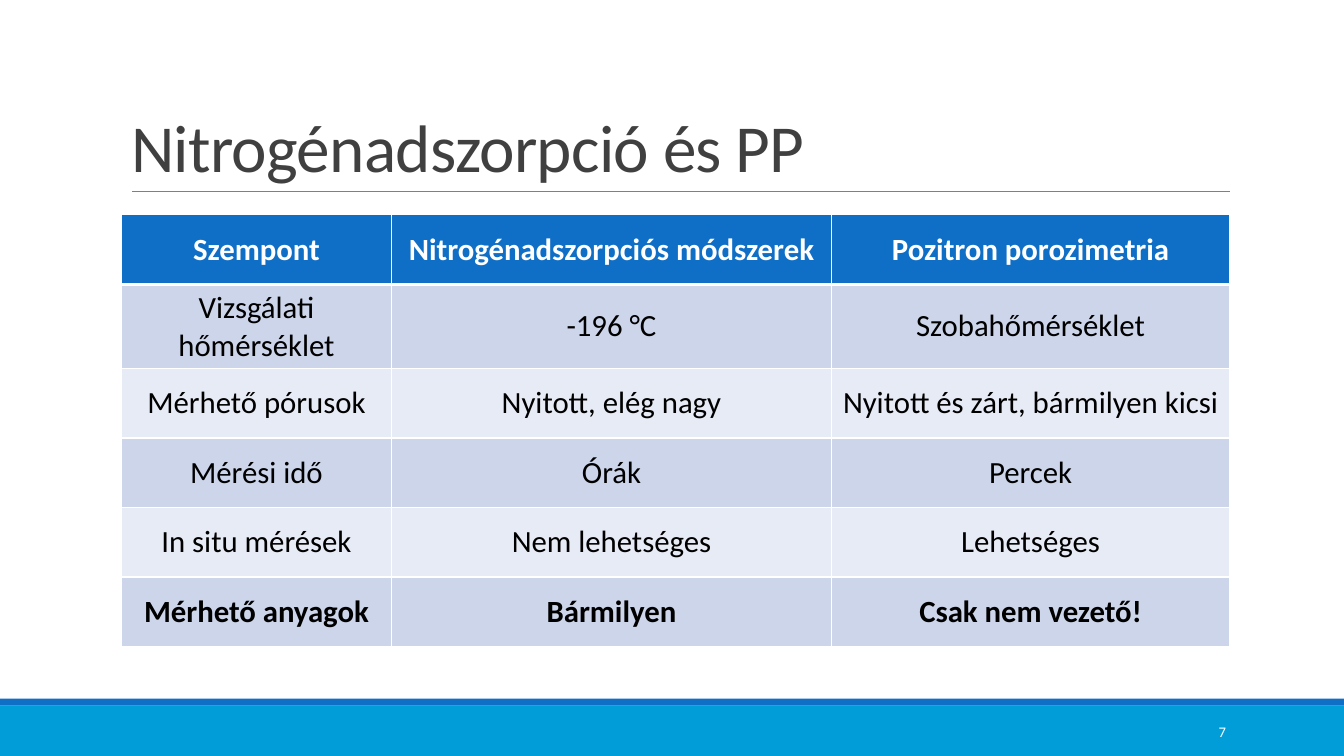
import pptx
import pptx.util
import pptx.dml.color
import pptx.enum.text
import pptx.enum.shapes
import pptx.oxml.ns
import lxml.etree
import dataclasses

Pt = pptx.util.Pt
Rgb = pptx.dml.color.RGBColor.from_string
Align = pptx.enum.text.PP_ALIGN
Anchor = pptx.enum.text.MSO_ANCHOR
qn = pptx.oxml.ns.qn


@dataclasses.dataclass(frozen=True)
class Theme:
    """Colours, type sizes and font of the slide."""
    font: str = "Calibri"
    white: str = "FFFFFF"
    black: str = "000000"
    ink: str = "404040"
    rule: str = "808080"
    blue: str = "0F6FC6"
    sky: str = "009DD9"
    bands: tuple = ("CCD5EA", "E7EBF5")
    title: float = 48
    cell: float = 22
    page: float = 10.5


THEME = Theme()
ROWS = [
    ("Szempont", "Nitrogénadszorpciós módszerek", "Pozitron porozimetria"),
    ("Vizsgálati hőmérséklet", "-196 °C", "Szobahőmérséklet"),
    ("Mérhető pórusok", "Nyitott, elég nagy", "Nyitott és zárt, bármilyen kicsi"),
    ("Mérési idő", "Órák", "Percek"),
    ("In situ mérések", "Nem lehetséges", "Lehetséges"),
    ("Mérhető anyagok", "Bármilyen", "Csak nem vezető!"),
]


def apply(item, form):
    """Set each attribute of item from a dict of format values."""
    for name, value in form.items():
        setattr(item, name, value)


def write(frame, text, size, color, bold=False, **form):
    """Write one formatted paragraph into a text frame and return its run."""
    para = frame.paragraphs[0]
    apply(para, form)
    run = para.add_run()
    run.text = text
    apply(run.font, {"name": THEME.font, "size": Pt(size), "bold": bold})
    run.font.color.rgb = Rgb(color)
    return run


def bar(slide, box, color):
    """Draw a plain filled band in the box."""
    shape = slide.shapes.add_shape(
        pptx.enum.shapes.MSO_SHAPE.RECTANGLE, *map(Pt, box))
    shape.shadow.inherit = False
    shape.fill.solid()
    shape.fill.fore_color.rgb = Rgb(color)
    shape.line.fill.background()


def footer(slide, box, page):
    """Draw the two footer bands and the page number."""
    left, top, width, height = box
    bar(slide, (left, top + 5, width, height - 5), THEME.sky)
    bar(slide, (left, top, width, 5), THEME.blue)
    spot = left + width - 180, top + 9.5, 102.75, 28.75
    frame = slide.shapes.add_textbox(*map(Pt, spot)).text_frame
    apply(frame, {"word_wrap": True, "vertical_anchor": Anchor.MIDDLE})
    write(frame, page, THEME.page, THEME.white, alignment=Align.RIGHT)


def head(slide, box, text):
    """Place the title in the box with a thin rule along its foot."""
    left, top, width, height = box
    foot = top + height
    line = slide.shapes.add_connector(
        pptx.enum.shapes.MSO_CONNECTOR.STRAIGHT,
        Pt(left + 7.9), Pt(foot), Pt(left + width), Pt(foot))
    line.line.color.rgb = Rgb(THEME.rule)
    line.line.width = Pt(0.5)
    lxml.etree.SubElement(line.element.spPr, qn("a:effectLst"))
    title = slide.shapes.title
    apply(title, dict(zip(("left", "top", "width", "height"), map(Pt, box))))
    frame = title.text_frame
    apply(frame, {"word_wrap": True, "vertical_anchor": Anchor.BOTTOM,
                  "auto_size": pptx.enum.text.MSO_AUTO_SIZE.NONE})
    run = write(frame, text, THEME.title, THEME.ink,
                alignment=Align.LEFT, line_spacing=0.85)
    run.font._element.set("spc", "-50")


def edge(cell, side, width):
    """Give one side of a cell a white border of the width in points."""
    props = cell._tc.get_or_add_tcPr()
    line = lxml.etree.SubElement(props, qn("a:ln" + side), w=str(Pt(width)))
    fill = lxml.etree.SubElement(line, qn("a:solidFill"))
    lxml.etree.SubElement(fill, qn("a:srgbClr"), val=THEME.white)


def grid(slide, box, rows, widths):
    """Place the comparison table in the box with banded rows."""
    shape = slide.shapes.add_table(len(rows), len(widths), *map(Pt, box))
    table = shape.table
    for col, width in zip(table.columns, widths):
        col.width = Pt(width)
    for r, row in enumerate(rows):
        table.rows[r].height = Pt(box[3] / len(rows))
        top = r == 0
        color = THEME.blue if top else THEME.bands[(r - 1) % 2]
        for c, text in enumerate(row):
            cell = table.cell(r, c)
            for side in "LRTB":
                thick = (top and side == "B") or (r == 1 and side == "T")
                edge(cell, side, 3 if thick else 1)
            cell.fill.solid()
            cell.fill.fore_color.rgb = Rgb(color)
            cell.vertical_anchor = Anchor.MIDDLE
            write(cell.text_frame, text, THEME.cell,
                  THEME.white if top else THEME.black,
                  top or r == len(rows) - 1, alignment=Align.CENTER)


def main():
    """Build the slide and save it."""
    deck = pptx.Presentation()
    apply(deck, {"slide_width": Pt(960), "slide_height": Pt(540)})
    slide = deck.slides.add_slide(deck.slide_layouts[5])
    footer(slide, (0, 499, 960, 41), "7")
    head(slide, (86.4, 22.5, 792, 114.2), "Nitrogénadszorpció és PP")
    grid(slide, (86.8, 153.5, 791.5, 298), ROWS, (192.8, 314.4, 284.3))
    deck.save("out.pptx")


if __name__ == "__main__":
    main()
